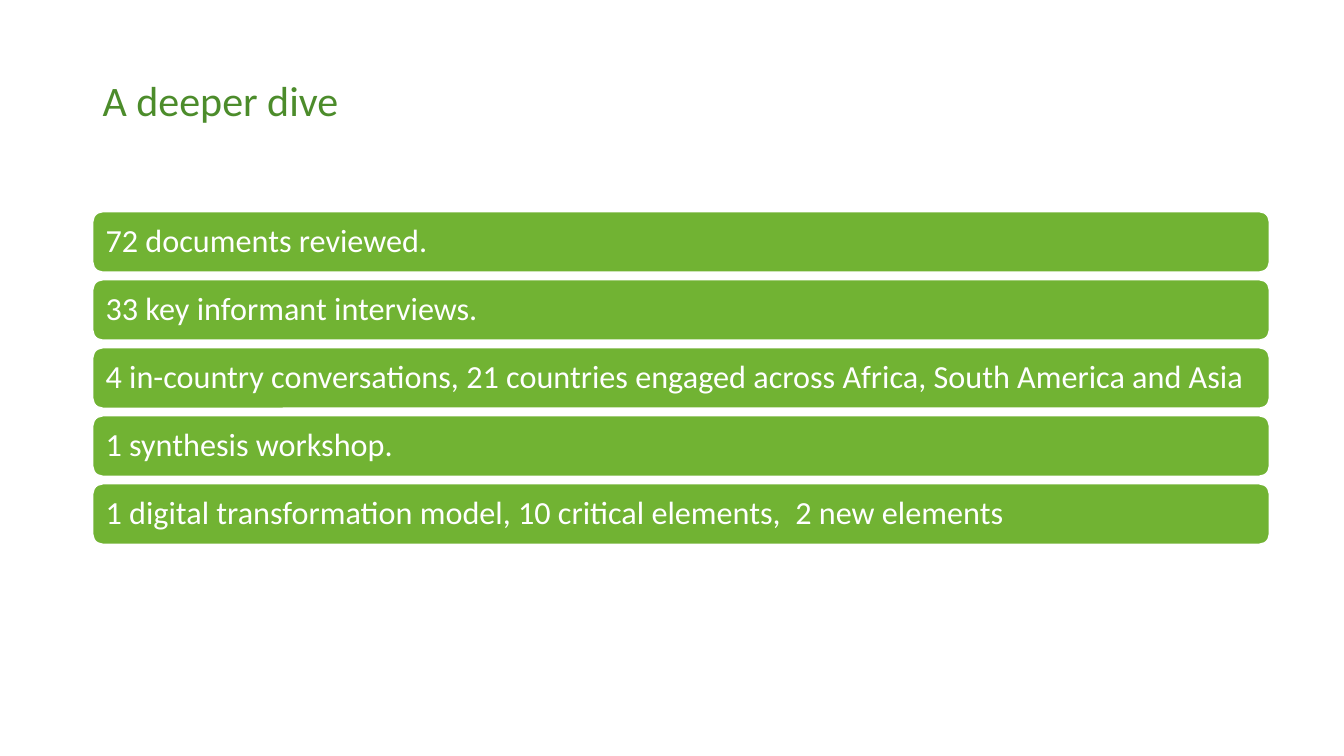
from pptx import Presentation
from pptx.dml.color import RGBColor
from pptx.enum.shapes import MSO_SHAPE as Shape
from pptx.enum.text import MSO_ANCHOR as Anchor, PP_ALIGN as Align
from pptx.util import Inches, Pt

GREEN = RGBColor(0x71, 0xB3, 0x33)
DARK = RGBColor(0x4C, 0x8C, 0x2B)
WHITE = RGBColor(0xFF, 0xFF, 0xFF)

LEFT = 0.92
TOP = 2.1
PITCH = 0.675
WIDE = 11.67
HIGH = 0.6

FACTS = [
    "72 documents reviewed.",
    "33 key informant interviews.",
    "4 in-country conversations, 21 countries engaged across Africa, South America and Asia",
    "1 synthesis workshop.",
    "1 digital transformation model, 10 critical elements,  2 new elements",
]


def write(shape, text, size, color, anchor):
    """Put one left-aligned line of text in a shape."""
    frame = shape.text_frame
    frame.word_wrap = True
    frame.vertical_anchor = anchor
    frame.margin_left = frame.margin_right = Inches(0.1)
    frame.margin_top = frame.margin_bottom = Inches(0.05)
    para = frame.paragraphs[0]
    para.text = text
    para.alignment = Align.LEFT
    para.line_spacing = 0.9
    para.font.name = "Calibri"
    para.font.size = Pt(size)
    para.font.color.rgb = color


def add_title(slide, text):
    """Add the slide heading."""
    box = slide.shapes.add_textbox(
        Inches(LEFT), Inches(0.75), Inches(11.5), Inches(1))
    write(box, text, 30, DARK, Anchor.TOP)


def add_bar(slide, row, text):
    """Add one green bar at its row of the list."""
    bar = slide.shapes.add_shape(
        Shape.ROUNDED_RECTANGLE, Inches(LEFT), Inches(TOP + row * PITCH),
        Inches(WIDE), Inches(HIGH))
    bar.shadow.inherit = False
    bar.fill.solid()
    bar.fill.fore_color.rgb = GREEN
    bar.line.color.rgb = WHITE
    bar.line.width = Pt(1)
    write(bar, text, 23, WHITE, Anchor.MIDDLE)


def main():
    """Build the slide and save it."""
    deck = Presentation()
    deck.slide_width = Inches(13.33)
    deck.slide_height = Inches(7.5)
    slide = deck.slides.add_slide(deck.slide_layouts[6])
    add_title(slide, "A deeper dive")
    for row, fact in enumerate(FACTS):
        add_bar(slide, row, fact)
    deck.save("out.pptx")


if __name__ == "__main__":
    main()
